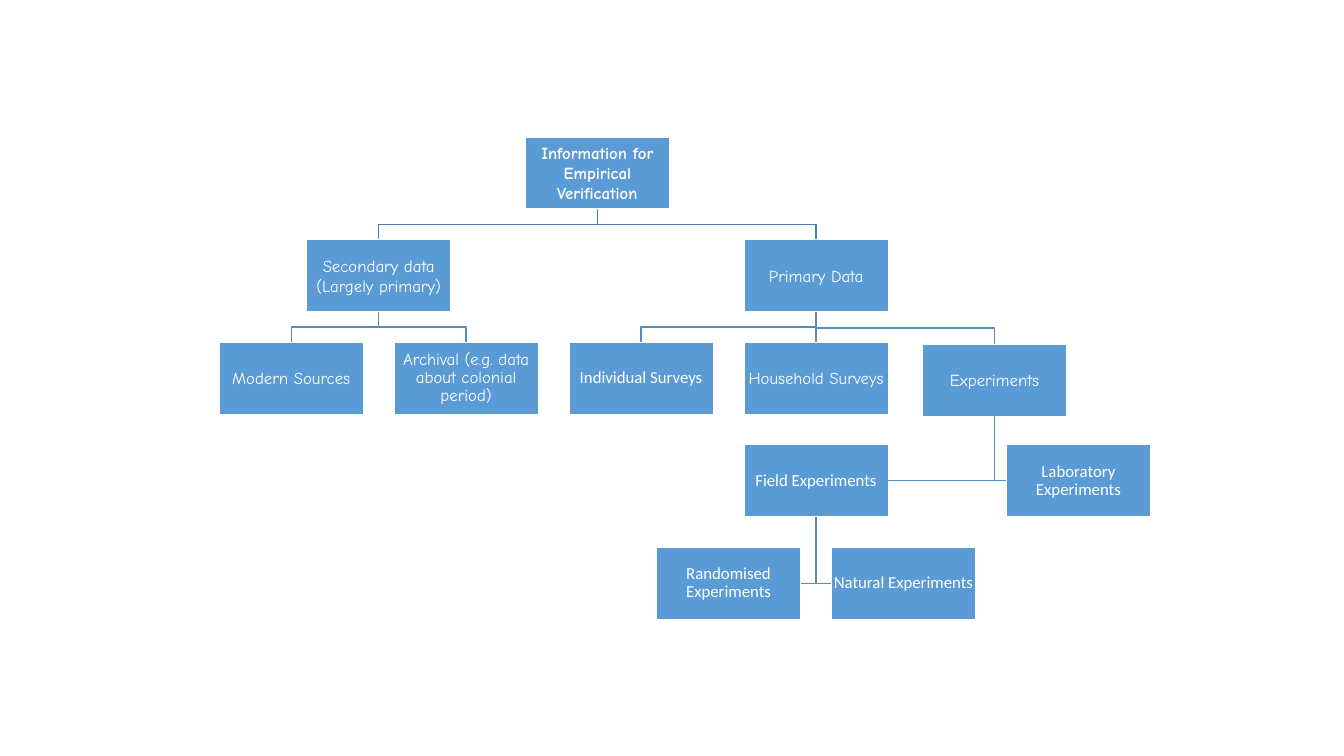
from collections import namedtuple

from pptx import Presentation
from pptx.dml.color import RGBColor
from pptx.enum import shapes, text
from pptx.oxml.ns import qn
from pptx.util import Cm, Pt
from lxml import etree

BLUE = RGBColor(0x5B, 0x9B, 0xD5)
LINK_BLUE = RGBColor(0x53, 0x8D, 0xC1)
ROOT_LINK_BLUE = RGBColor(0x49, 0x7C, 0xAB)
WHITE = RGBColor(0xFF, 0xFF, 0xFF)

BOX_WIDTH, BOX_HEIGHT, INSET = Cm(3.64), Cm(1.82), Cm(0.03)
LAST_COLUMN, LAST_ROW = 9, 4

Node = namedtuple("Node", "label column row font spacing bold", defaults=("Comic Neue", 1.0, False))
NODES = {
    "root": Node("Information for Empirical Verification", 3.5, 0, bold=True),
    "secondary": Node("Secondary data\n(Largely primary)", 1, 1),
    "modern": Node("Modern Sources", 0, 2),
    "archival": Node("Archival (e.g. data about colonial period)", 2, 2, spacing=0.9),
    "primary": Node("Primary Data", 6, 1),
    "individual": Node("Individual Surveys", 4, 2, "Calibri", 0.9),
    "household": Node("Household Surveys", 6, 2),
    "experiments": Node("Experiments", 8.04, 2.02),
    "field": Node("Field Experiments", 6, 3, "Calibri", 0.9),
    "randomised": Node("Randomised Experiments", 5, 4, "Calibri", 0.9),
    "natural": Node("Natural Experiments", 7, 4, "Calibri", 0.9),
    "laboratory": Node("Laboratory Experiments", 9, 3, "Calibri", 0.9),
}
CHILDREN = {
    "root": ["secondary", "primary"],
    "secondary": ["modern", "archival"],
    "primary": ["individual", "household", "experiments"],
}
SIDE_CHILDREN = {
    "experiments": ["field", "laboratory"],
    "field": ["randomised", "natural"],
}


def add_node(slide, node, left, top):
    shape = slide.shapes.add_shape(shapes.MSO_SHAPE.RECTANGLE, left, top, BOX_WIDTH, BOX_HEIGHT)
    shape.shadow.inherit = False
    shape.fill.solid()
    shape.fill.fore_color.rgb = BLUE
    shape.line.color.rgb = WHITE
    shape.line.width = Pt(1)
    frame = shape.text_frame
    frame.word_wrap = True
    frame.vertical_anchor = text.MSO_ANCHOR.MIDDLE
    frame.margin_left = frame.margin_right = frame.margin_top = frame.margin_bottom = INSET
    frame.text = node.label
    for paragraph in frame.paragraphs:
        paragraph.alignment = text.PP_ALIGN.CENTER
        paragraph.line_spacing = node.spacing
        for run in paragraph.runs:
            run.font.name = node.font
            run.font.size = Pt(12)
            run.font.bold = node.bold
            run.font.color.rgb = WHITE
    return shape


def add_straight_link(slide, parent, child):
    link = slide.shapes.add_connector(shapes.MSO_CONNECTOR.STRAIGHT, 0, 0, 0, 0)
    link.begin_connect(parent, 2)
    link.end_connect(child, 0)
    etree.SubElement(link._element.spPr, qn("a:effectLst"))
    return link


def add_bent_link(slide, points):
    builder = slide.shapes.build_freeform(*points[0])
    builder.add_line_segments(points[1:], close=False)
    link = builder.convert_to_shape()
    link.shadow.inherit = False
    link.fill.background()
    return link


def link_down(slide, parent, child):
    """Link the bottom of the parent to the top of the child."""
    start_x, start_y = parent.left + parent.width // 2, parent.top + parent.height
    end_x, end_y = child.left + child.width // 2, child.top
    if start_x == end_x:
        return add_straight_link(slide, parent, child)
    middle = (start_y + end_y) // 2
    return add_bent_link(
        slide, [(start_x, start_y), (start_x, middle), (end_x, middle), (end_x, end_y)])


def link_sideways(slide, parent, child):
    """Link the bottom of the parent to the near side of the child."""
    x, y = parent.left + parent.width // 2, parent.top + parent.height
    side = child.left if child.left > x else child.left + child.width
    middle = child.top + child.height // 2
    return add_bent_link(slide, [(x, y), (x, middle), (side, middle)])


def draw_tree(slide, left, top, width, height):
    column_step = (width - BOX_WIDTH) / LAST_COLUMN
    row_step = (height - BOX_HEIGHT) / LAST_ROW
    boxes = {
        key: add_node(slide, node, int(left + node.column * column_step),
                      int(top + node.row * row_step))
        for key, node in NODES.items()
    }
    for families, add_link in ((CHILDREN, link_down), (SIDE_CHILDREN, link_sideways)):
        for parent, children in families.items():
            for child in children:
                link = add_link(slide, boxes[parent], boxes[child])
                link.line.color.rgb = ROOT_LINK_BLUE if parent == "root" else LINK_BLUE
                link.line.width = Pt(1)


def main():
    presentation = Presentation()
    presentation.slide_width, presentation.slide_height = Cm(33.87), Cm(19.05)
    slide = presentation.slides.add_slide(presentation.slide_layouts[6])
    draw_tree(slide, Cm(5.52), Cm(3.45), Cm(23.48), Cm(12.16))
    presentation.save("out.pptx")


if __name__ == "__main__":
    main()
